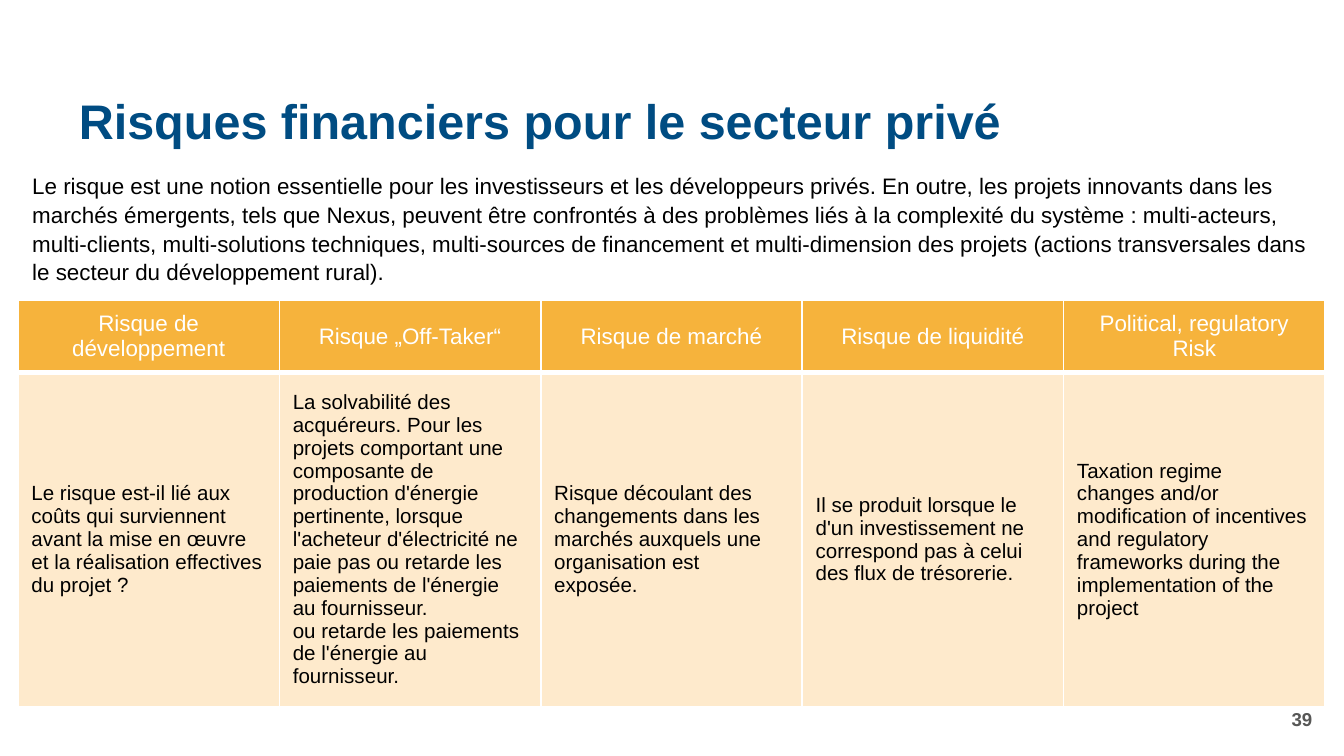
"""Builds the slide on financial risks for the private sector."""
from lxml import etree
from pptx import Presentation
from pptx.dml.color import RGBColor
from pptx.enum import text as t
from pptx.oxml.ns import qn
from pptx.util import Cm, Pt

HUES = {"blue": "004C82", "grey": "575756", "gold": "F6B33C",
        "cream": "FEEACC", "white": "FFFFFF", "black": "000000"}
LEFT, MID, RIGHT = t.PP_ALIGN.LEFT, t.PP_ALIGN.CENTER, t.PP_ALIGN.RIGHT


def write(frame, words, size, hue, bold=False, align=LEFT, space=None):
    frame.word_wrap = True
    frame.text = words
    for para in frame.paragraphs:
        para.alignment = align
        para.line_spacing = space
        font = para.font
        font.name, font.size, font.bold = "Arial", Pt(size), bold
        font.color.rgb = RGBColor.from_string(HUES[hue])


def edge(cell, side, width):
    line = etree.SubElement(cell._tc.get_or_add_tcPr(), qn(f"a:ln{side}"), w=str(Pt(width)))
    fill = etree.SubElement(line, qn("a:solidFill"))
    etree.SubElement(fill, qn("a:srgbClr"), val=HUES["white"])


deck = Presentation()
deck.slide_width, deck.slide_height = Cm(25.4), Cm(14.29)
slide = deck.slides.add_slide(deck.slide_layouts[6])

title = slide.shapes.add_textbox(Cm(1.24), Cm(1.6), Cm(23.8), Cm(1.5)).text_frame
title.vertical_anchor = t.MSO_ANCHOR.MIDDLE
write(title, "Risques financiers pour le secteur privé", 26, "blue", True, space=0.9)

page = slide.shapes.add_textbox(Cm(19.33), Cm(13.21), Cm(5.72), Cm(0.76)).text_frame
page.vertical_anchor = t.MSO_ANCHOR.MIDDLE
write(page, "39", 10, "grey", True, RIGHT)

risks = [
    ("Risque de développement",
     "Le risque est-il lié aux coûts qui surviennent avant la mise en œuvre "
     "et la réalisation effectives du projet ?"),
    ("Risque „Off-Taker“",
     "La solvabilité des acquéreurs. Pour les projets comportant une composante de "
     "production d'énergie pertinente, lorsque l'acheteur d'électricité ne paie pas "
     "ou retarde les paiements de l'énergie au fournisseur.\n"
     "ou retarde les paiements de l'énergie au fournisseur."),
    ("Risque de marché",
     "Risque découlant des changements dans les marchés auxquels une organisation "
     "est exposée."),
    ("Risque de liquidité",
     "Il se produit lorsque le\n"
     "d'un investissement ne correspond pas à celui des flux de trésorerie."),
    ("Political, regulatory Risk",
     "Taxation regime\n"
     "changes and/or modification of incentives and regulatory frameworks during "
     "the implementation of the project"),
]
styles = [(12, "white", MID, "gold", 1, 3), (11, "black", LEFT, "cream", 3, 1)]

grid = slide.shapes.add_table(2, len(risks), Cm(0.34), Cm(5.67), Cm(24.7), Cm(7.21)).table
grid.rows[0].height, grid.rows[1].height = Cm(1.37), Cm(5.84)
for col, risk in enumerate(risks):
    grid.columns[col].width = Cm(4.94)
    for row, (size, hue, align, back, top, base) in enumerate(styles):
        cell = grid.cell(row, col)
        cell.vertical_anchor = t.MSO_ANCHOR.MIDDLE
        write(cell.text_frame, risk[row], size, hue, align=align)
        for side, width in zip("LRTB", (1, 1, top, base)):
            edge(cell, side, width)
        cell.fill.solid()
        cell.fill.fore_color.rgb = RGBColor.from_string(HUES[back])

intro = slide.shapes.add_textbox(Cm(0.36), Cm(3.1), Cm(24.7), Cm(2.31)).text_frame
write(intro,
      "Le risque est une notion essentielle pour les investisseurs et les développeurs "
      "privés. En outre, les projets innovants dans les marchés émergents, tels que Nexus, "
      "peuvent être confrontés à des problèmes liés à la complexité du système : "
      "multi-acteurs, multi-clients, multi-solutions techniques, multi-sources de "
      "financement et multi-dimension des projets (actions transversales dans le secteur "
      "du développement rural).", 12, "black", space=1.07)

deck.save("out.pptx")
